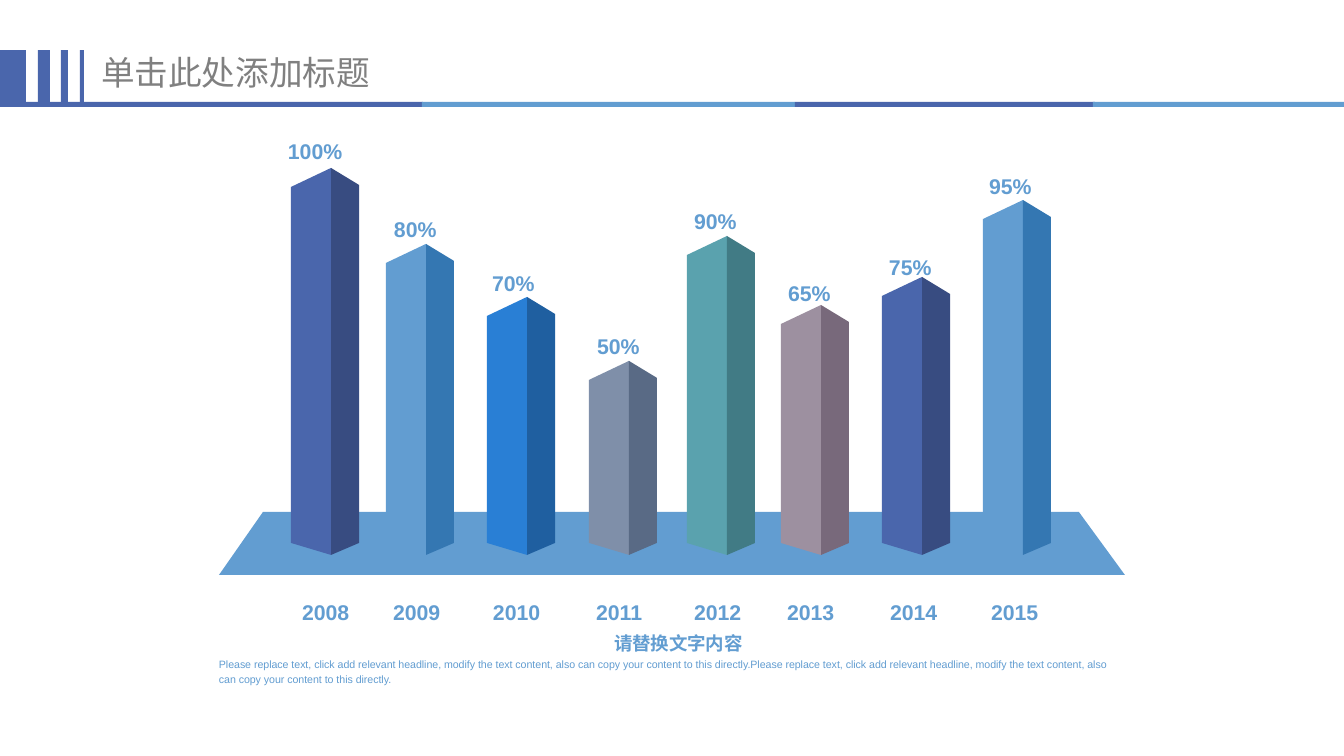
from dataclasses import dataclass

from lxml import etree
from pptx import Presentation
from pptx.dml.color import RGBColor
from pptx.enum.shapes import MSO_SHAPE
from pptx.enum.text import MSO_AUTO_SIZE, PP_ALIGN
from pptx.oxml.ns import qn
from pptx.util import Emu, Pt

RECT = MSO_SHAPE.RECTANGLE
GROW = MSO_AUTO_SIZE.SHAPE_TO_FIT_TEXT
JUSTIFY = PP_ALIGN.JUSTIFY
PX = 914400 / 134.4


@dataclass(frozen=True)
class Theme:
    navy: str = "4A66AC"
    sky: str = "629DD1"
    gray: str = "808080"
    latin: str = "Arial"
    cjk: str = "Noto Sans CJK SC"
    title: float = 18
    label: float = 11.4
    caption: float = 9.9
    body: float = 5.7


T = Theme()
NAVY = (T.navy, "384C81")
SKY = (T.sky, "3477B2")

TITLE = "单击此处添加标题"
CAPTION = "请替换文字内容"
SENTENCE = ("Please replace text, click add relevant headline, modify the text "
            "content, also can copy your content to this directly.")

STRIPES = [(0, 26), (38, 12), (61, 7), (80, 4)]
RULES = [(0, 423, T.navy), (422, 373, T.sky), (795, 300, T.navy), (1093, 251, T.sky)]
FLOOR = [(1125, 575), (219, 575), (263, 512), (1079, 512)]

# year, value, column left and top, value label left and top, year left, faces
COLUMNS = [
    ("2008", "100%", 291, 168, 275, 126, 289, NAVY),
    ("2009", "80%", 386, 244, 381, 204, 380, SKY),
    ("2010", "70%", 487, 297, 479, 258, 480, ("297FD5", "1F5FA0")),
    ("2011", "50%", 589, 361, 584, 321, 583, ("7F8FA9", "596A85")),
    ("2012", "90%", 687, 236, 681, 196, 681, ("5AA2AE", "417B85")),
    ("2013", "65%", 781, 305, 775, 268, 774, ("9D90A0", "78697B")),
    ("2014", "75%", 882, 277, 876, 242, 877, NAVY),
    ("2015", "95%", 983, 200, 976, 161, 978, SKY),
]
FOLD, WIDTH = 40, 68
SHOULDERS = (19, 17)
BASE, BASE_SIDE = 555, 543
YEAR_TOP, LABEL_H = 587, 44


def px(n):
    return Emu(round(n * PX))


def paint(shape, color):
    shape.shadow.inherit = False
    shape.fill.solid()
    shape.fill.fore_color.rgb = RGBColor.from_string(color)
    shape.line.fill.background()


def add_bar(s, x, y, w, h, color):
    paint(s.shapes.add_shape(RECT, px(x), px(y), px(w), px(h)), color)


def add_polygon(s, points, color):
    builder = s.shapes.build_freeform(*points[0], scale=PX)
    builder.add_line_segments(points[1:], close=True)
    paint(builder.convert_to_shape(), color)


def add_text(s, text, x, y, w, h, size, color=T.sky, font=T.latin, bold=False,
             align=None, spacing=1.2, wrap=False, inset=(0, 0)):
    tf = s.shapes.add_textbox(px(x), px(y), px(w), px(h)).text_frame
    tf.word_wrap = wrap
    tf.auto_size = GROW
    tf.margin_left = tf.margin_right = px(inset[0])
    tf.margin_top = tf.margin_bottom = px(inset[1])
    p = tf.paragraphs[0]
    p.alignment = align
    p.line_spacing = spacing
    r = p.add_run()
    r.text = text
    r.font.size = Pt(size)
    r.font.bold = bold
    r.font.color.rgb = RGBColor.from_string(color)
    r.font.name = font
    etree.SubElement(r._r.get_or_add_rPr(), qn("a:ea"), typeface=T.cjk)


def add_label(s, text, x, y, w):
    add_text(s, text, x, y, w, LABEL_H, T.label, bold=True, align=JUSTIFY, inset=(13, 7))


def add_column(s, left, top, faces):
    fold = left + FOLD
    for side, shoulder, color in zip((left, left + WIDTH), SHOULDERS, faces):
        add_polygon(s, [(fold, BASE), (side, BASE_SIDE),
                        (side, top + shoulder), (fold, top)], color)


def main():
    prs = Presentation()
    prs.slide_width, prs.slide_height = px(1344), px(756)
    s = prs.slides.add_slide(prs.slide_layouts[6])

    add_text(s, TITLE, 91, 47, 359, 51, T.title, color=T.gray, font=T.cjk,
             spacing=1.0, wrap=True, inset=(10, 5))
    for x, w in STRIPES:
        add_bar(s, x, 50, w, 52, T.navy)
    for x, w, color in RULES:
        add_bar(s, x, 102, w, 5, color)

    add_polygon(s, FLOOR, T.sky)
    for year, value, left, top, value_x, value_y, year_x, faces in COLUMNS:
        add_column(s, left, top, faces)
        add_label(s, value, value_x, value_y, 82 if len(value) > 3 else 70)
        add_label(s, year, year_x, YEAR_TOP, 75)

    add_text(s, SENTENCE * 2, 219, 655, 906, 31, T.body, wrap=True)
    add_text(s, CAPTION, 614, 628, 132, 27, T.caption, bold=True)
    prs.save("out.pptx")


if __name__ == "__main__":
    main()
